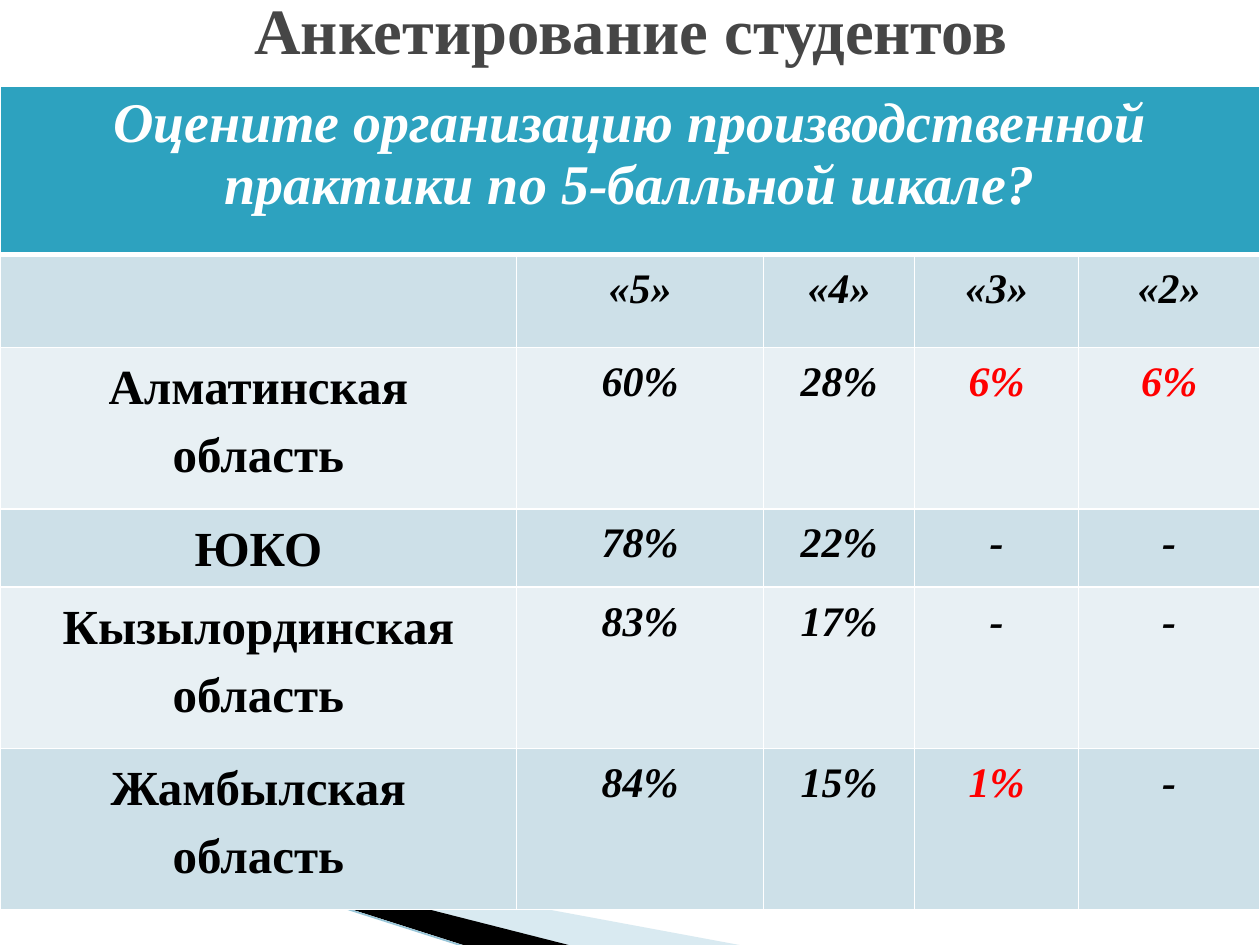
from dataclasses import dataclass

from lxml.etree import SubElement
from pptx import Presentation
from pptx.dml.color import RGBColor
from pptx.enum.shapes import MSO_CONNECTOR as Connector
from pptx.enum.text import MSO_ANCHOR as Anchor, MSO_AUTO_SIZE as AutoSize, PP_ALIGN as Align
from pptx.oxml.ns import qn
from pptx.util import Pt

FONT = "Times New Roman"
WHITE, BLACK, RED = "FFFFFF", "000000", "FF0000"
BANDS = ("CDE0E8", "E8F0F4")
COLUMN_WIDTHS = (295.2, 141.1, 86.4, 93.6, 103.7)


@dataclass
class Wedge:
    points: list[tuple[float, float]]
    color: str
    opacity: int = 100


@dataclass
class Row:
    label: str
    values: tuple[str, ...]
    height: float
    red_values: tuple[str, ...] = ()


WEDGES = [
    Wedge([(39.6, 468.7), (428.4, 540.7), (328.3, 540.7), (39.6, 468)], "A0CBDC", 40),
    Wedge([(38.2, 467.3), (329, 540.7), (267.8, 541.4), (38.9, 468)], BLACK),
]
HEADING = "Оцените организацию производственной практики по 5-балльной шкале?"
HEADING_HEIGHT = 96.5
ROWS = [
    Row("", ("«5»", "«4»", "«3»", "«2»"), 53.2),
    Row("Алматинская\nобласть", ("60%", "28%", "6%", "6%"), 92.1, ("6%",)),
    Row("ЮКО", ("78%", "22%", "-", "-"), 44.8),
    Row("Кызылординская\nобласть", ("83%", "17%", "-", "-"), 92.1),
    Row("Жамбылская\nобласть", ("84%", "15%", "1%", "-"), 92.1, ("1%",)),
]


def rgb(color: str) -> RGBColor:
    return RGBColor.from_string(color)


def format_text(text_frame, size: float, color: str, italic: bool = False,
                line_spacing: float = 1.0) -> None:
    for paragraph in text_frame.paragraphs:
        paragraph.alignment = Align.CENTER
        paragraph.line_spacing = line_spacing
        for run in paragraph.runs:
            run.font.name = FONT
            run.font.size = Pt(size)
            run.font.bold = True
            run.font.italic = italic
            run.font.color.rgb = rgb(color)


def draw_wedge(slide, wedge: Wedge) -> None:
    builder = slide.shapes.build_freeform(*wedge.points[0], scale=Pt(1))
    builder.add_line_segments(wedge.points[1:], close=True)
    shape = builder.convert_to_shape()
    shape.shadow.inherit = False
    shape.fill.solid()
    shape.fill.fore_color.rgb = rgb(wedge.color)
    shape.line.fill.background()
    if wedge.opacity < 100:
        color = shape.fill._xPr.find(qn("a:solidFill"))[0]
        SubElement(color, qn("a:alpha")).set("val", str(wedge.opacity * 1000))


def draw_edge(slide) -> None:
    edge = slide.shapes.add_connector(
        Connector.STRAIGHT, Pt(-0.7), Pt(455.8), Pt(267.1), Pt(541.4))
    edge.line.color.rgb = rgb("97C5D8")
    edge.line.width = Pt(0.95)
    SubElement(edge._element.spPr, qn("a:effectLst"))


def style_cell(cell, color: str, top: float = 1, bottom: float = 1) -> None:
    properties = cell._tc.get_or_add_tcPr()
    for side, width in (("L", 1), ("R", 1), ("T", top), ("B", bottom)):
        border = SubElement(properties, qn(f"a:ln{side}"), w=str(Pt(width)))
        fill = SubElement(border, qn("a:solidFill"))
        SubElement(fill, qn("a:srgbClr"), val=WHITE)
    cell.fill.solid()
    cell.fill.fore_color.rgb = rgb(color)


def fill_row(table, index: int, row: Row) -> None:
    table.rows[index].height = Pt(row.height)
    for column, text in enumerate((row.label, *row.values)):
        cell = table.cell(index, column)
        style_cell(cell, BANDS[(index - 1) % 2], top=3 if index == 1 else 1)
        cell.margin_left = cell.margin_right = Pt(5)
        cell.margin_top = cell.margin_bottom = 0
        cell.text_frame.text = text
        is_label = column == 0
        format_text(cell.text_frame, 28 if is_label else 24,
                    RED if text in row.red_values else BLACK,
                    italic=not is_label, line_spacing=1.25)


def draw_table(slide) -> None:
    height = HEADING_HEIGHT + sum(row.height for row in ROWS)
    table = slide.shapes.add_table(
        len(ROWS) + 1, len(COLUMN_WIDTHS), 0, Pt(49), Pt(720), Pt(height)).table
    table.first_row = table.horz_banding = False
    for column, width in zip(table.columns, COLUMN_WIDTHS):
        column.width = Pt(width)
    table.rows[0].height = Pt(HEADING_HEIGHT)
    for cell in table.rows[0].cells:
        style_cell(cell, "2DA2BF", bottom=3)
    heading = table.cell(0, 0)
    heading.merge(table.cell(0, len(COLUMN_WIDTHS) - 1))
    heading.text_frame.text = HEADING
    format_text(heading.text_frame, 32, WHITE, italic=True)
    for index, row in enumerate(ROWS, start=1):
        fill_row(table, index, row)


def draw_title(slide) -> None:
    title = slide.shapes.title
    title.left, title.top, title.width, title.height = Pt(36.7), 0, Pt(648), Pt(33)
    title.text_frame.text = "Анкетирование студентов"
    title.text_frame.word_wrap = True
    title.text_frame.auto_size = AutoSize.NONE
    title.text_frame.vertical_anchor = Anchor.MIDDLE
    format_text(title.text_frame, 36.9, "464646")


def main() -> None:
    presentation = Presentation()
    presentation.slide_width, presentation.slide_height = Pt(720), Pt(540)
    slide = presentation.slides.add_slide(presentation.slide_layouts[5])
    slide.background.fill.solid()
    slide.background.fill.fore_color.rgb = rgb(WHITE)
    for wedge in WEDGES:
        draw_wedge(slide, wedge)
    draw_edge(slide)
    draw_table(slide)
    draw_title(slide)
    presentation.save("out.pptx")


if __name__ == "__main__":
    main()
